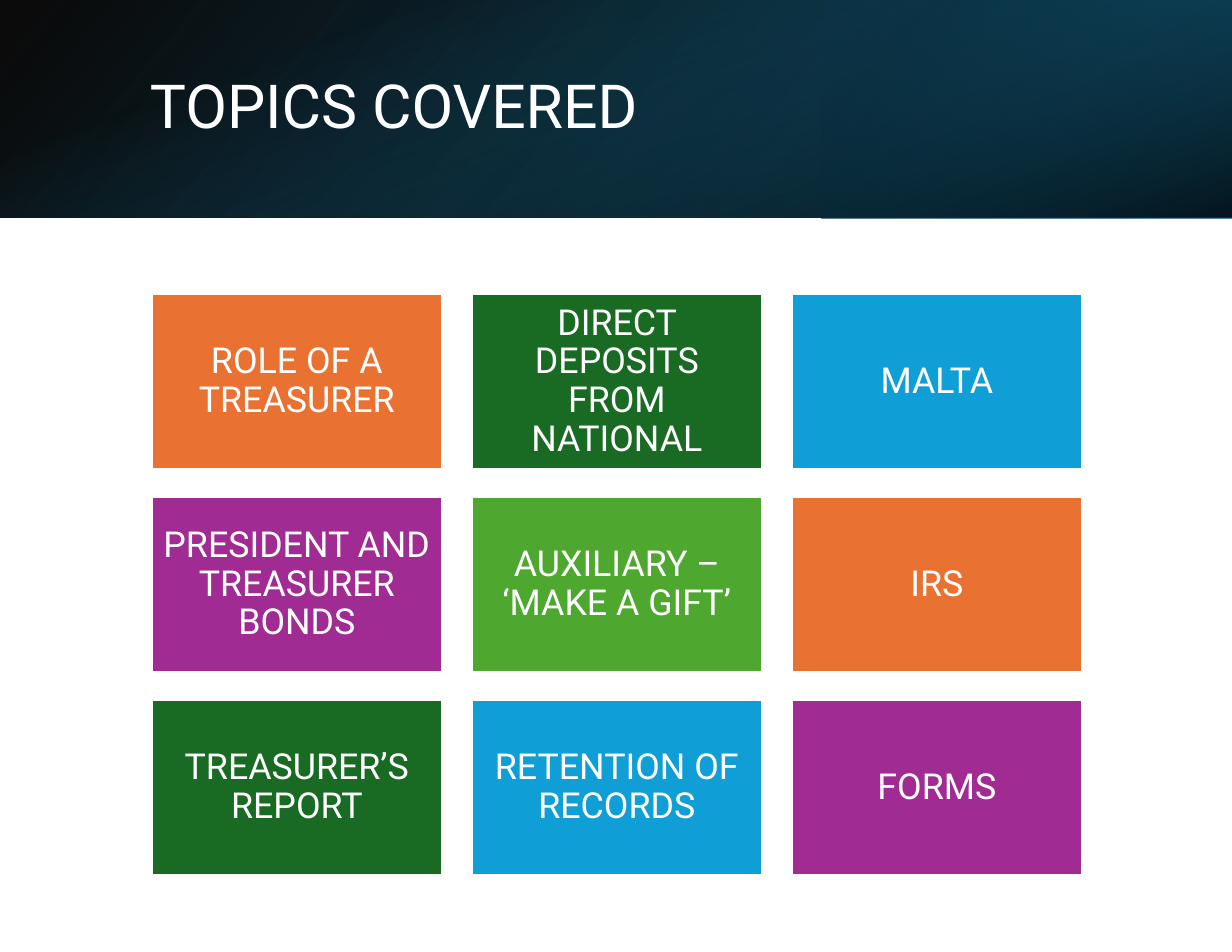
from dataclasses import dataclass

from lxml import etree
from pptx import Presentation
from pptx.dml.color import RGBColor
from pptx.enum.shapes import MSO_SHAPE
from pptx.enum.text import MSO_ANCHOR, PP_ALIGN
from pptx.oxml.ns import qn
from pptx.util import Emu, Pt

FONT = "Roboto"
WHITE = "FFFFFF"
ORANGE, DARK_GREEN, BLUE = "E97132", "196B24", "0F9ED5"
PURPLE, GREEN = "A02B93", "4EA72E"

SLIDE_W, SLIDE_H, BANNER_H = 1232, 952, 218
COLUMNS = 3
GRID_X, GRID_Y = 152, 294
TILE_W, TILE_H = 290, 175
STEP_X, STEP_Y = 320, 203
INSET = 11


@dataclass
class Stop:
    position: int  # percent
    color: str
    opacity: int = 100  # percent


@dataclass
class Layer:
    x: int
    y: int
    w: int
    h: int
    stops: list[Stop]
    angle: int  # clockwise degrees
    rotation: int = 0
    flipped: bool = False


@dataclass
class Tile:
    text: str
    color: str


LAYERS = [
    Layer(0, 0, SLIDE_W, BANNER_H,
          [Stop(0, "000000", 96), Stop(100, "104862")], 140, flipped=True),
    Layer(821, 0, 411, BANNER_H,
          [Stop(19, "0B3041", 68), Stop(100, "156082", 79)], 320, 180, True),
    Layer((SLIDE_W - BANNER_H) // 2, (BANNER_H - SLIDE_W) // 2, BANNER_H, SLIDE_W,
          [Stop(23, "156082", 0), Stop(99, "000000", 74)], 340, 90),
]

TILES = [
    Tile("ROLE OF A TREASURER", ORANGE),
    Tile("DIRECT DEPOSITS FROM NATIONAL", DARK_GREEN),
    Tile("MALTA", BLUE),
    Tile("PRESIDENT AND TREASURER BONDS", PURPLE),
    Tile("AUXILIARY – ‘MAKE A GIFT’", GREEN),
    Tile("IRS", ORANGE),
    Tile("TREASURER’S REPORT", DARK_GREEN),
    Tile("RETENTION OF RECORDS", BLUE),
    Tile("FORMS", PURPLE),
]


def px(n: int) -> Emu:
    return Emu(round(n * 914400 / 112))


def rgb(color: str) -> RGBColor:
    return RGBColor.from_string(color)


def add_rect(s, x: int, y: int, w: int, h: int):
    sp = s.shapes.add_shape(MSO_SHAPE.RECTANGLE, px(x), px(y), px(w), px(h))
    sp.shadow.inherit = False
    return sp


def write(sp, text: str, size: int, align: PP_ALIGN) -> None:
    tf = sp.text_frame
    tf.word_wrap = True
    tf.vertical_anchor = MSO_ANCHOR.MIDDLE
    tf.margin_left = tf.margin_right = px(INSET)
    tf.margin_top = tf.margin_bottom = px(INSET)
    p = tf.paragraphs[0]
    p.text = text
    p.alignment = align
    p.line_spacing = 0.9
    p.font.name = FONT
    p.font.size = Pt(size)
    p.font.color.rgb = rgb(WHITE)


def set_gradient(sp, stops: list[Stop], angle: int) -> None:
    grad = etree.Element(qn("a:gradFill"), rotWithShape="1")
    gs_list = etree.SubElement(grad, qn("a:gsLst"))
    for stop in stops:
        gs = etree.SubElement(gs_list, qn("a:gs"), pos=str(stop.position * 1000))
        color = etree.SubElement(gs, qn("a:srgbClr"), val=stop.color)
        etree.SubElement(color, qn("a:alpha"), val=str(stop.opacity * 1000))
    etree.SubElement(grad, qn("a:lin"), ang=str(angle * 60000), scaled="0")
    sp._element.spPr.find(qn("a:prstGeom")).addnext(grad)


def add_layer(s, layer: Layer) -> None:
    sp = add_rect(s, layer.x, layer.y, layer.w, layer.h)
    sp.line.fill.background()
    sp.rotation = layer.rotation
    if layer.flipped:
        sp._element.spPr.find(qn("a:xfrm")).set("flipH", "1")
    set_gradient(sp, layer.stops, layer.angle)


def add_tile(s, tile: Tile, x: int, y: int) -> None:
    sp = add_rect(s, x, y, TILE_W, TILE_H)
    sp.fill.solid()
    sp.fill.fore_color.rgb = rgb(tile.color)
    sp.line.color.rgb = rgb(WHITE)
    sp.line.width = Pt(1.5)
    write(sp, tile.text, 23, PP_ALIGN.CENTER)


def main() -> None:
    prs = Presentation()
    prs.slide_width, prs.slide_height = px(SLIDE_W), px(SLIDE_H)
    s = prs.slides.add_slide(prs.slide_layouts[6])

    # Banner
    for layer in LAYERS:
        add_layer(s, layer)

    # Title
    title = s.shapes.add_textbox(px(139), px(48), px(1015), px(122))
    write(title, "TOPICS COVERED", 39, PP_ALIGN.LEFT)

    # Topic grid
    for i, tile in enumerate(TILES):
        row, col = divmod(i, COLUMNS)
        add_tile(s, tile, GRID_X + col * STEP_X, GRID_Y + row * STEP_Y)

    prs.save("out.pptx")


if __name__ == "__main__":
    main()
